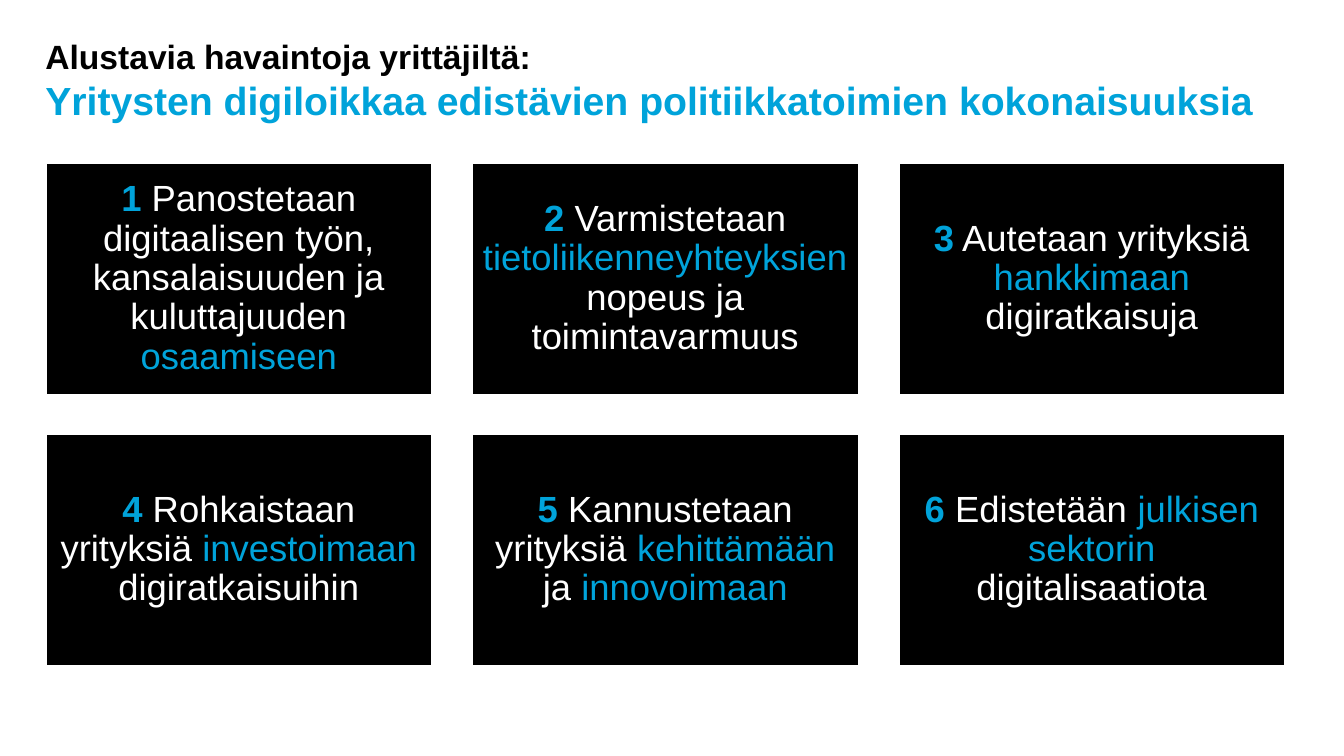
from pptx import Presentation
from pptx.dml.color import RGBColor
from pptx.enum import shapes, text
from pptx.util import Inches, Pt

COLORS = {"black": "000000", "white": "FFFFFF", "blue": "00A3DA"}


def add_span(para, words, size, color, bold=False):
    span = para.add_run()
    span.text = words
    span.font.name = "Arial"
    span.font.size = Pt(size)
    span.font.bold = bold
    span.font.color.rgb = RGBColor.from_string(COLORS[color])


def set_frame(frame, anchor, margin):
    frame.word_wrap = True
    frame.vertical_anchor = anchor
    frame.margin_left = frame.margin_right = Inches(margin)
    frame.margin_top = frame.margin_bottom = Inches(margin)


deck = Presentation()
deck.slide_width = Inches(13.33)
deck.slide_height = Inches(7.5)
page = deck.slides.add_slide(deck.slide_layouts[6])

# Title
title = page.shapes.add_textbox(Inches(0.45), Inches(0), Inches(12.3), Inches(1.22))
set_frame(title.text_frame, text.MSO_ANCHOR.BOTTOM, 0)
para = title.text_frame.paragraphs[0]
add_span(para, "Alustavia havaintoja yrittäjiltä:", 24, "black", True)
para.add_line_break()
add_span(para, "Yritysten digiloikkaa edistävien politiikkatoimien kokonaisuuksia",
         28, "blue", True)

# Card wording: plain and highlighted parts alternate, starting with plain
cards = [
    [" Panostetaan digitaalisen työn, kansalaisuuden ja kuluttajuuden ", "osaamiseen"],
    [" Varmistetaan ", "tietoliikenneyhteyksien", " nopeus ja toimintavarmuus"],
    [" Autetaan yrityksiä ", "hankkimaan", " digiratkaisuja"],
    [" Rohkaistaan yrityksiä ", "investoimaan", " digiratkaisuihin"],
    [" Kannustetaan yrityksiä ", "kehittämään", " ja ", "innovoimaan"],
    [" Edistetään ", "julkisen sektorin ", "digitalisaatiota"],
]

# Grid of numbered cards, three to a row
for index, parts in enumerate(cards):
    row, column = divmod(index, 3)
    card = page.shapes.add_shape(
        shapes.MSO_SHAPE.RECTANGLE,
        Inches(0.45 + 4.23 * column), Inches(1.61 + 2.69 * row),
        Inches(3.84), Inches(2.31))
    card.shadow.inherit = False
    card.fill.solid()
    card.fill.fore_color.rgb = RGBColor.from_string(COLORS["black"])
    card.line.color.rgb = RGBColor.from_string(COLORS["white"])
    card.line.width = Pt(2)

    set_frame(card.text_frame, text.MSO_ANCHOR.MIDDLE, 0.11)
    para = card.text_frame.paragraphs[0]
    para.alignment = text.PP_ALIGN.CENTER
    para.line_spacing = 0.9
    add_span(para, str(index + 1), 26, "blue", True)
    for order, words in enumerate(parts):
        add_span(para, words, 26, "blue" if order % 2 else "white")

deck.save("out.pptx")
